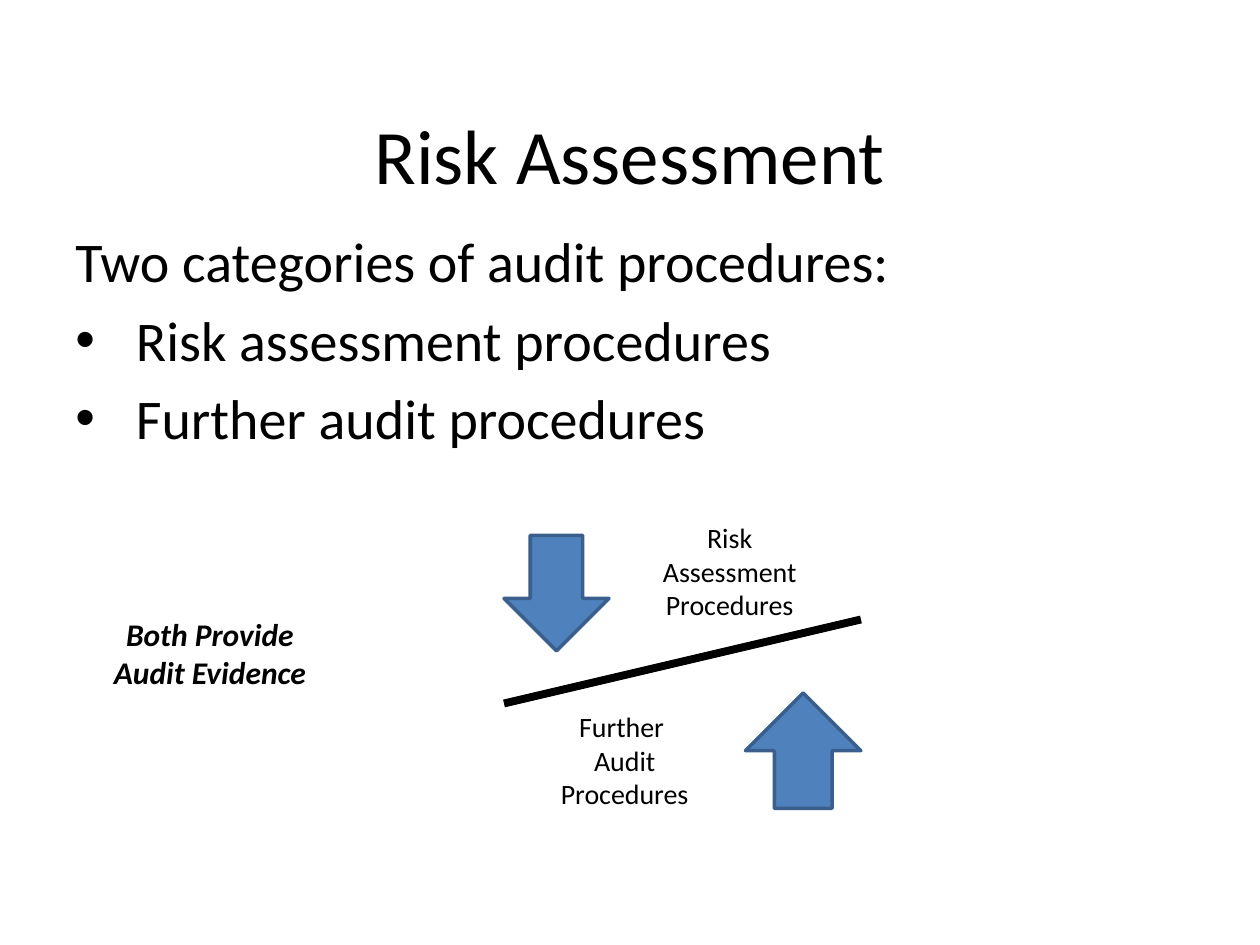
from typing import NamedTuple

from lxml.etree import SubElement
from pptx import Presentation
from pptx.dml.color import RGBColor
from pptx.enum.shapes import MSO_CONNECTOR, MSO_SHAPE
from pptx.enum.text import MSO_ANCHOR, PP_ALIGN
from pptx.oxml.ns import qn
from pptx.util import Inches, Pt

FONT = "Calibri"
COLORS = {"text": "000000", "arrow": "4F81BD", "edge": "3A5F8C", "beam": "000000"}
CELL = Inches(1) / 12
INDENT = Inches(0.38)


class Box(NamedTuple):
    col: float
    row: float
    cols: float
    rows: float


class Label(NamedTuple):
    box: Box
    lines: list[str]
    size: int = 16
    emphasis: bool = False


class Arrow(NamedTuple):
    box: Box
    kind: MSO_SHAPE


TITLE = Box(6, 9.25, 108, 10.75)
BODY = Box(6, 21, 108, 59.4)
BEAM_START, BEAM_END = (48, 67), (82, 59)
ARROWS = [
    Arrow(Box(71, 66, 11, 11), MSO_SHAPE.UP_ARROW),
    Arrow(Box(48, 51, 10, 11), MSO_SHAPE.DOWN_ARROW),
]
LABELS = [
    Label(Box(8, 58, 24, 8.5), ["Both Provide Audit Evidence"], 18, True),
    Label(Box(60, 49, 19, 11), ["Risk Assessment Procedures"]),
    Label(Box(50, 67, 19, 11), ["Further ", "Audit Procedures"]),
]


def cells(*values: float) -> list[int]:
    return [round(v * CELL) for v in values]


def color(name: str) -> RGBColor:
    return RGBColor.from_string(COLORS[name])


def write(p, text: str, *, size: int, align=PP_ALIGN.LEFT, emphasis=None, bullet=None,
          hanging=False, before: float = 0) -> None:
    p.alignment = align
    p.space_before = Pt(before)
    r = p.add_run()
    r.text = text
    r.font.name = FONT
    r.font.size = Pt(size)
    r.font.color.rgb = color("text")
    r.font.bold = r.font.italic = emphasis
    pPr = p._p.get_or_add_pPr()
    if hanging:
        pPr.set("marL", str(INDENT))
        pPr.set("indent", str(-INDENT))
    if bullet:
        SubElement(pPr, qn("a:buFont"), typeface="Arial")
        SubElement(pPr, qn("a:buChar"), char=bullet)


def add_text(s, box: Box):
    tf = s.shapes.add_textbox(*cells(*box)).text_frame
    tf.word_wrap = True
    return tf


def add_line(tf, index: int):
    return tf.add_paragraph() if index else tf.paragraphs[0]


def draw_title(s, text: str) -> None:
    sp = s.shapes.title
    sp.left, sp.top, sp.width, sp.height = cells(*TITLE)
    sp.text_frame.vertical_anchor = MSO_ANCHOR.MIDDLE
    write(sp.text_frame.paragraphs[0], text, size=44, align=PP_ALIGN.CENTER)


def draw_body(s, intro: str, items: list[str]) -> None:
    tf = add_text(s, BODY)
    for i, text in enumerate([intro, *items]):
        write(add_line(tf, i), text, size=32, hanging=True, before=6.4,
              bullet="•" if i else None)


def draw_label(s, label: Label) -> None:
    tf = add_text(s, label.box)
    for i, text in enumerate(label.lines):
        write(add_line(tf, i), text, size=label.size, align=PP_ALIGN.CENTER,
              emphasis=label.emphasis)


def draw_arrow(s, arrow: Arrow) -> None:
    sp = s.shapes.add_shape(arrow.kind, *cells(*arrow.box))
    sp.shadow.inherit = False
    sp.fill.solid()
    sp.fill.fore_color.rgb = color("arrow")
    sp.line.color.rgb = color("edge")
    sp.line.width = Pt(2)


def draw_beam(s) -> None:
    line = s.shapes.add_connector(MSO_CONNECTOR.STRAIGHT, *cells(*BEAM_START, *BEAM_END))
    line.line.color.rgb = color("beam")
    line.line.width = Pt(4.5)
    SubElement(line._element.spPr, qn("a:effectLst"))


def main() -> None:
    prs = Presentation()
    prs.slide_width, prs.slide_height = Inches(10), Inches(7.5)
    s = prs.slides.add_slide(prs.slide_layouts[5])
    draw_title(s, "Risk Assessment")
    draw_body(s, "Two categories of audit procedures:",
              [" Risk assessment procedures", " Further audit procedures"])
    for arrow in ARROWS:
        draw_arrow(s, arrow)
    draw_beam(s)
    for label in LABELS:
        draw_label(s, label)
    prs.save("out.pptx")


if __name__ == "__main__":
    main()
